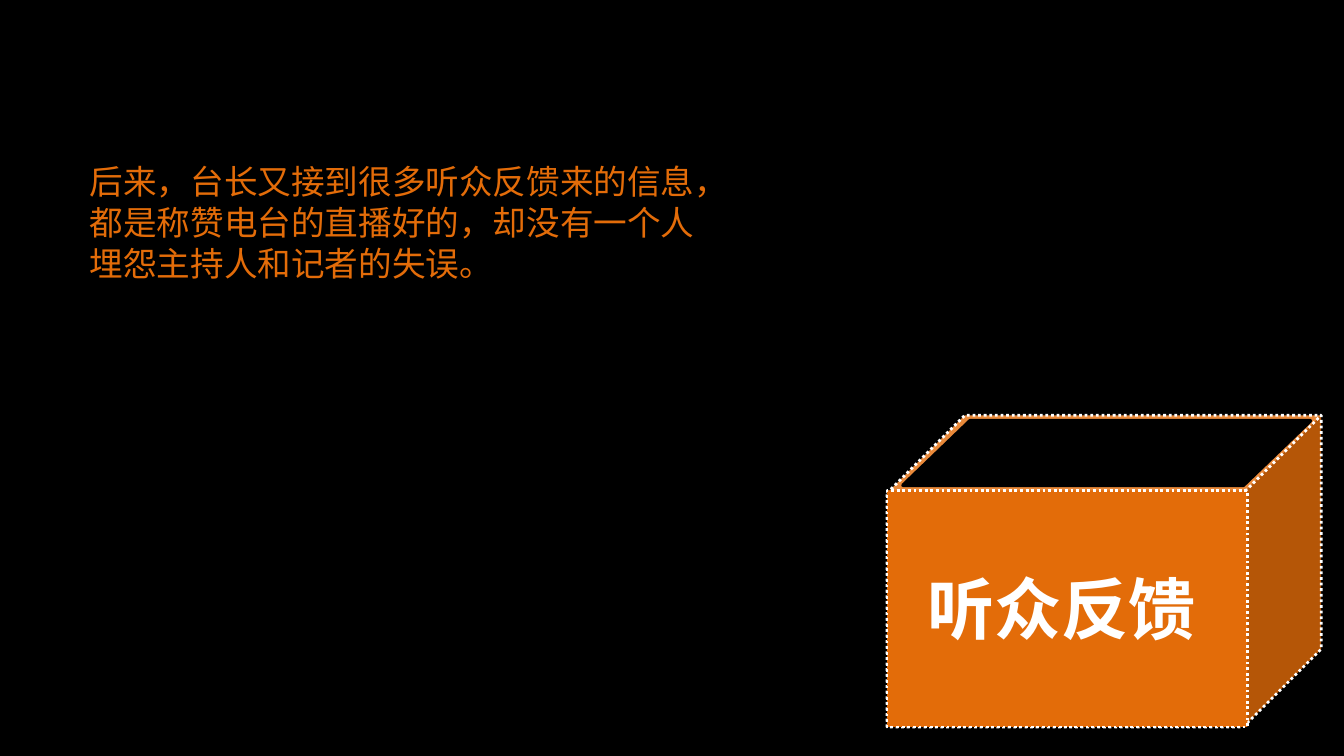
from pptx import Presentation
from pptx.dml.color import RGBColor
from pptx.enum.dml import MSO_LINE
from pptx.enum.shapes import MSO_SHAPE
from pptx.oxml.ns import qn
from pptx.util import Pt

BLACK = RGBColor(0x00, 0x00, 0x00)
WHITE = RGBColor(0xFF, 0xFF, 0xFF)
ORANGE = RGBColor(0xE3, 0x6C, 0x09)

CUBE = MSO_SHAPE.CUBE
PARALLELOGRAM = MSO_SHAPE.PARALLELOGRAM
RECTANGLE = MSO_SHAPE.RECTANGLE
DOTTED = MSO_LINE.ROUND_DOT  # stored as sysDot

BLANK_LAYOUT = 6
STORY = [
    "后来，台长又接到很多听众反馈来的信息，",
    "都是称赞电台的直播好的，却没有一个人",
    "埋怨主持人和记者的失误。",
]


class SlideBuilder:
    font = "Noto Sans CJK SC"

    def __init__(self, page, background):
        self.page = page
        page.background.fill.solid()
        page.background.fill.fore_color.rgb = background

    def shape(self, kind, left, top, width, height, fill, line, weight, dash=None):
        shape = self.page.shapes.add_shape(
            kind, Pt(left), Pt(top), Pt(width), Pt(height))
        shape.shadow.inherit = False
        shape.fill.solid()
        shape.fill.fore_color.rgb = fill
        shape.line.color.rgb = line
        shape.line.width = Pt(weight)
        if dash is not None:
            shape.line.dash_style = dash
        return shape

    def text(self, lines, left, top, width, height, size, color, spacing, bold=False):
        box = self.page.shapes.add_textbox(Pt(left), Pt(top), Pt(width), Pt(height))
        frame = box.text_frame
        frame.word_wrap = True
        for index, line in enumerate(lines):
            para = frame.add_paragraph() if index else frame.paragraphs[0]
            para.line_spacing = Pt(spacing)
            span = para.add_run()
            span.text = line
            span.font.name = self.font
            span.font.size = Pt(size)
            span.font.bold = bold
            span.font.color.rgb = color
            east_asian = span.font._element.makeelement(
                qn("a:ea"), {"typeface": self.font})
            span.font._element.append(east_asian)
        return box


def main():
    deck = Presentation()
    deck.slide_width, deck.slide_height = Pt(720), Pt(405)
    page = deck.slides.add_slide(deck.slide_layouts[BLANK_LAYOUT])
    builder = SlideBuilder(page, BLACK)

    # Open feedback box: body, opening, front panel
    builder.shape(CUBE, 475.2, 222.5, 232.6, 167, ORANGE, WHITE, 1.5, DOTTED)
    opening = builder.shape(
        PARALLELOGRAM, 483.8, 225.4, 218.2, 34.6, BLACK, BLACK, 2)
    opening.adjustments[0] = 1.04
    builder.shape(RECTANGLE, 475.2, 262.8, 193, 126.7, ORANGE, WHITE, 1.5, DOTTED)
    builder.text(["听众反馈"], 489.6, 297.4, 168.5, 51, 36, WHITE, 46, bold=True)

    builder.text(STORY, 41, 82, 365, 72.7, 18, ORANGE, 22)
    deck.save("out.pptx")


if __name__ == "__main__":
    main()
